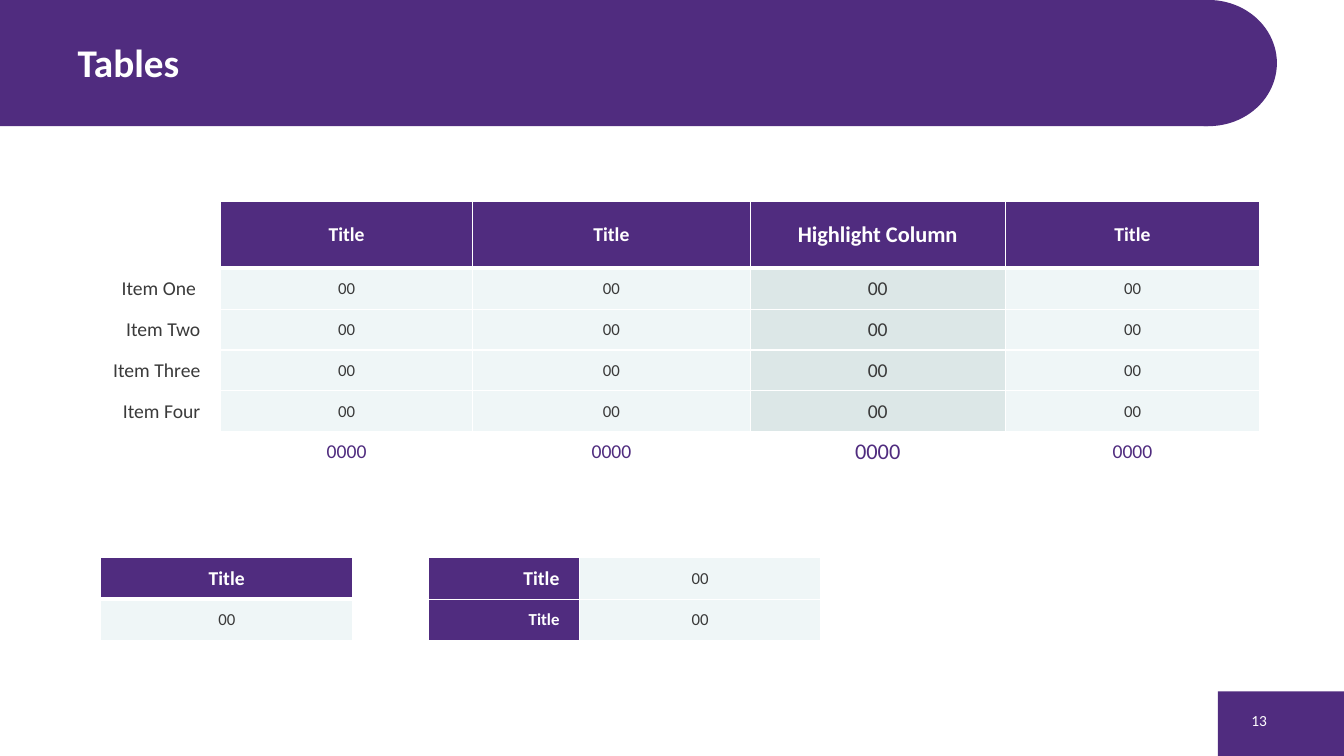
from lxml.etree import SubElement
from pptx import Presentation
from pptx.dml.color import RGBColor
from pptx.enum.shapes import MSO_SHAPE
from pptx.enum.text import MSO_ANCHOR, PP_ALIGN
from pptx.oxml import parse_xml
from pptx.oxml.ns import nsdecls
from pptx.util import Cm, Pt

PURPLE = RGBColor(0x50, 0x2C, 0x7F)
WHITE = RGBColor(0xFF, 0xFF, 0xFF)
DARK = RGBColor(0x3A, 0x3A, 0x3A)
PALE = RGBColor(0xEF, 0xF6, 0xF7)
GREY = RGBColor(0xDC, 0xE7, 0xE7)
FONT = "Calibri"

# kind: fill, text colour, size, bold, alignment
KINDS = {
    "head": (PURPLE, WHITE, 14, True, PP_ALIGN.CENTER),
    "high head": (PURPLE, WHITE, 16, True, PP_ALIGN.CENTER),
    "side": (PURPLE, WHITE, 14, True, PP_ALIGN.RIGHT),
    "small side": (PURPLE, WHITE, 12, True, PP_ALIGN.RIGHT),
    "item": (WHITE, DARK, 14, False, PP_ALIGN.RIGHT),
    "value": (PALE, DARK, 12, False, PP_ALIGN.CENTER),
    "high value": (GREY, DARK, 14, False, PP_ALIGN.CENTER),
    "total": (WHITE, PURPLE, 14, False, PP_ALIGN.CENTER),
    "high total": (WHITE, PURPLE, 16, False, PP_ALIGN.CENTER),
}

TITLE = "Tables"
NUMBER = "13"
HEADS = ["Title", "Title", "Highlight Column", "Title"]
ITEMS = ["Item One ", "Item Two", "Item Three", "Item Four"]
HIGH = 2  # highlighted column, counted without the item names


def line(name, texts, kind):
    """One row of the main table: a name, then cells of one kind."""
    return [(name, "item")] + [
        (text, "high " + kind if i == HIGH else kind)
        for i, text in enumerate(texts)]


MAIN = [line("", HEADS, "head"),
        *[line(item, ["00"] * 4, "value") for item in ITEMS],
        line("", ["0000"] * 4, "total")]
SMALL = [[("Title", "head")], [("00", "value")]]
SIDE = [[("Title", "side"), ("00", "value")],
        [("Title", "small side"), ("00", "value")]]

# cells, left, top, column widths, row heights, header row
TABLES = [
    (MAIN, 1.7, 5.08, [3.86, 6.35, 7.0, 6.42, 6.42], [1.68] + [1.03] * 5, True),
    (SMALL, 2.54, 14.05, [6.35], [1.05, 1.03], True),
    (SIDE, 10.8, 14.05, [3.81, 6.07], [1.05, 1.03], False),
]


def style(para, size, color, bold, align):
    para.alignment = align
    for run in para.runs:
        font = run.font
        font.name, font.size, font.bold = FONT, Pt(size), bold
        font.color.rgb = color


def border(cell, top, bottom):
    """White borders, one point at the sides; they stand before the fill."""
    props = cell._tc.get_or_add_tcPr()
    for i, (side, width) in enumerate(
            [("L", 1), ("R", 1), ("T", top), ("B", bottom)]):
        edge = parse_xml(f'<a:ln{side} {nsdecls("a")} w="{Pt(width)}">'
                         f'<a:solidFill><a:srgbClr val="{WHITE}"/></a:solidFill>'
                         f'</a:ln{side}>')
        props.insert(i, edge)


def draw_table(slide, rows, left, top, widths, heights, header):
    table = slide.shapes.add_table(
        len(rows), len(widths), Cm(left), Cm(top),
        Cm(sum(widths)), Cm(sum(heights))).table
    table.first_row = table.horz_banding = False
    for col, width in zip(table.columns, widths):
        col.width = Cm(width)
    for r, row in enumerate(rows):
        table.rows[r].height = Cm(heights[r])
        for c, (text, kind) in enumerate(row):
            fill, color, size, bold, align = KINDS[kind]
            cell = table.cell(r, c)
            cell.text_frame.text = text
            style(cell.text_frame.paragraphs[0], size, color, bold, align)
            cell.vertical_anchor = MSO_ANCHOR.MIDDLE
            if align == PP_ALIGN.RIGHT:
                cell.margin_left = cell.margin_right = Cm(0.51)
            cell.fill.solid()
            cell.fill.fore_color.rgb = fill
            border(cell, 3 if header and r == 1 else 1,
                   3 if header and r == 0 else 1)


def block(slide, kind, *box):
    shape = slide.shapes.add_shape(kind, *map(Cm, box))
    shape.shadow.inherit = False
    shape.fill.solid()
    shape.fill.fore_color.rgb = PURPLE
    shape.line.fill.background()


def main():
    prs = Presentation()
    prs.slide_width, prs.slide_height = Cm(33.87), Cm(19.05)
    slide = prs.slides.add_slide(prs.slide_layouts[5])

    block(slide, MSO_SHAPE.RECTANGLE, 30.69, 17.42, 3.18, 1.63)
    block(slide, MSO_SHAPE.RECTANGLE, 0, 0, 30.45, 3.18)
    block(slide, MSO_SHAPE.OVAL, 28.73, 0, 3.45, 3.18)

    title = slide.shapes.title
    title.element.getparent().append(title.element)  # in front of the band
    title.left, title.top, title.width, title.height = map(
        Cm, (1.7, 0.2, 25.4, 2.74))
    number = slide.shapes.add_textbox(*map(Cm, (30.91, 17.65, 1.27, 1.02)))
    for shape, text, size, bold, align in [
            (title, TITLE, 28, True, PP_ALIGN.LEFT),
            (number, NUMBER, 11, False, PP_ALIGN.RIGHT)]:
        frame = shape.text_frame
        frame.text = text
        frame.word_wrap = True
        frame.vertical_anchor = MSO_ANCHOR.MIDDLE
        style(frame.paragraphs[0], size, WHITE, bold, align)

    for spec in TABLES:
        draw_table(slide, *spec)
    prs.save("out.pptx")


if __name__ == "__main__":
    main()
